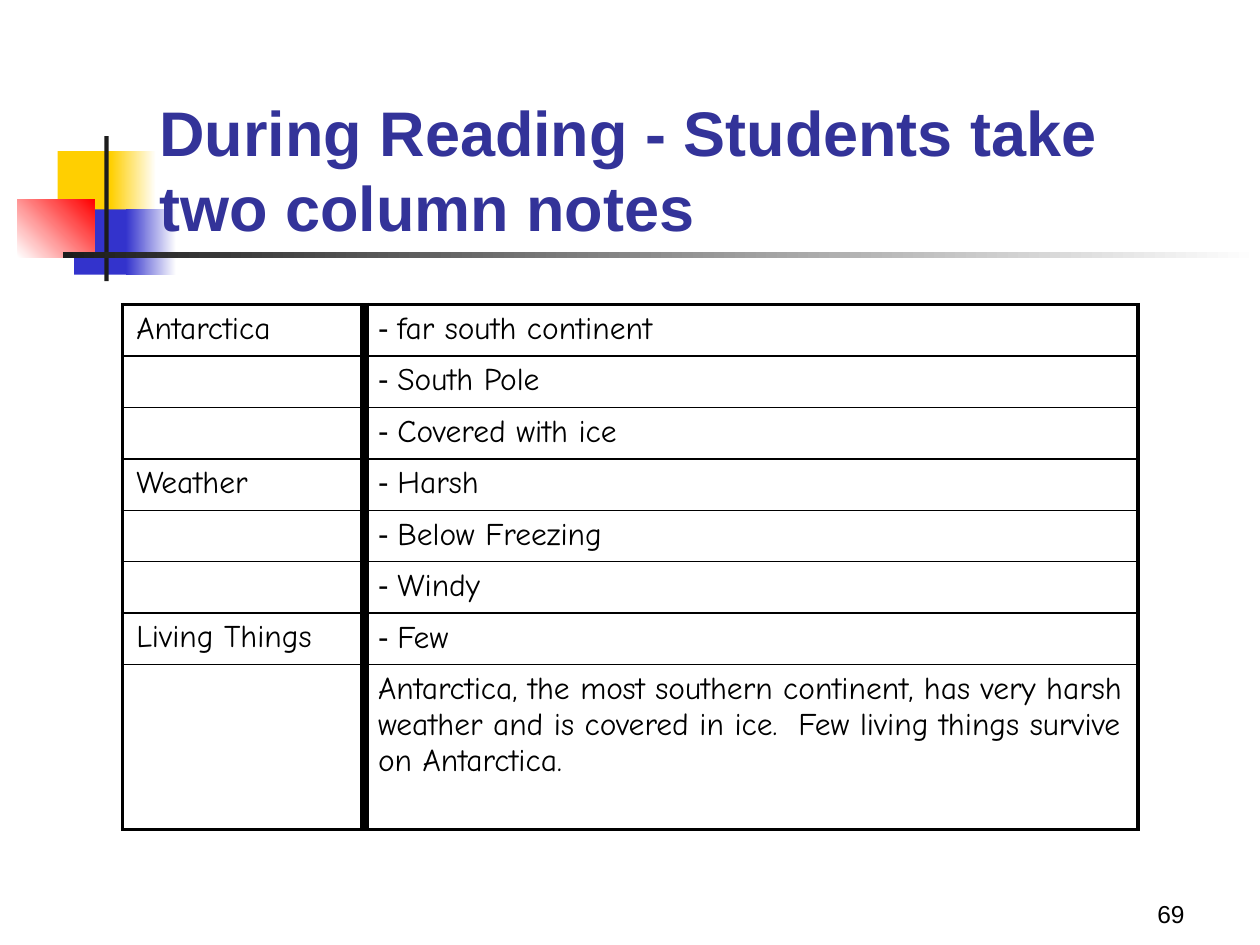
from dataclasses import dataclass

from lxml import etree
from pptx import Presentation
from pptx.dml.color import RGBColor
from pptx.enum.shapes import MSO_SHAPE
from pptx.enum.text import MSO_ANCHOR, PP_ALIGN
from pptx.oxml.ns import qn
from pptx.util import Pt

RECT = MSO_SHAPE.RECTANGLE
BOTTOM = MSO_ANCHOR.BOTTOM
LEFT, RIGHT = PP_ALIGN.LEFT, PP_ALIGN.RIGHT


@dataclass(frozen=True)
class Theme:
    gold: str = "FFCF01"
    blue: str = "3333CC"
    red: str = "FF0000"
    dark: str = "1C1C1C"
    white: str = "FFFFFF"
    black: str = "000000"
    title: str = "333399"
    sans: str = "Arial"
    hand: str = "Comic Neue"
    head: int = 36
    body: int = 18
    foot: int = 14
    thin: float = 1
    frame: float = 2.25
    spine: float = 6


THEME = Theme()

NOTES = [
    ("Antarctica", "far south continent"),
    ("", "South Pole"),
    ("", "Covered with ice"),
    ("Weather", "Harsh"),
    ("", "Below Freezing"),
    ("", "Windy"),
    ("Living Things", "Few"),
]
SUMMARY = ("Antarctica, the most southern continent, has very harsh weather "
           "and is covered in ice.  Few living things survive on Antarctica.")


def style(font, name, size, color, bold=False):
    font.name, font.size, font.bold = name, Pt(size), bold
    font.color.rgb = RGBColor.from_string(color)


def add_rect(slide, box, start, end=None, angle=0):
    """Rectangle in one colour, or fading from start to end."""
    shape = slide.shapes.add_shape(RECT, *map(Pt, box))
    shape.shadow.inherit = False
    shape.line.fill.background()
    if end is None:
        shape.fill.solid()
        shape.fill.fore_color.rgb = RGBColor.from_string(start)
        return
    shape.fill.gradient()
    shape.fill.gradient_angle = angle
    for stop, color, place in zip(shape.fill.gradient_stops, (start, end), (0, 1)):
        stop.color.rgb = RGBColor.from_string(color)
        stop.position = place


def add_motif(slide, box):
    """Overlapping squares with a cross of two bars."""
    x, y, w, h = box
    t = THEME
    add_rect(slide, (x + 23, y + 8.6, 34.6, 37.4), t.gold)
    add_rect(slide, (x + 53.3, y + 8.6, 25.9, 37.4), t.gold, t.white)
    add_rect(slide, (x + 32.4, y + 41.8, 33.1, 37.4), t.blue)
    add_rect(slide, (x + 61.9, y + 41.8, 28.8, 37.4), t.blue, t.white)
    add_rect(slide, (x, y + 36, 43.9, 33.1), t.white, t.red, 45)
    add_rect(slide, (x + 49.7, y, 2.4, h), t.dark)
    add_rect(slide, (x + 26, y + 66.2, w - 26, 3.6), t.dark, t.white)


def add_text(slide, box, text, size, color, align=LEFT, bold=False):
    frame = slide.shapes.add_textbox(*map(Pt, box)).text_frame
    frame.word_wrap = True
    frame.vertical_anchor = BOTTOM
    para = frame.paragraphs[0]
    para.text, para.alignment = text, align
    style(para.font, THEME.sans, size, color, bold)


def set_edges(cell, widths):
    """Border widths in the order left, right, top, bottom."""
    props = cell._tc.get_or_add_tcPr()
    for side, width in zip("LRTB", widths):
        line = etree.SubElement(props, qn(f"a:ln{side}"), w=str(Pt(width)))
        fill = etree.SubElement(line, qn("a:solidFill"))
        etree.SubElement(fill, qn("a:srgbClr"), val=THEME.black)


def fill_cell(cell, text, dash):
    cell.margin_left = cell.margin_right = Pt(7.9)
    cell.margin_top = cell.margin_bottom = Pt(3.6)
    para = cell.text_frame.paragraphs[0]
    style(para.font, THEME.hand, THEME.body, THEME.black)
    parts = [("- ", THEME.sans)] if dash else []
    for words, name in parts + [(text, THEME.hand)]:
        if words:
            run = para.add_run()
            run.text = words
            style(run.font, name, THEME.body, THEME.black)


def add_notes(slide, box, topic=138.2, step=29.4):
    """Two-column notes; the summary row takes the height left over."""
    x, y, w, h = box
    t = THEME
    rows = NOTES + [("", SUMMARY)]
    last = len(rows) - 1
    table = slide.shapes.add_table(len(rows), 2, *map(Pt, box)).table
    table.first_row = table.horz_banding = False
    table.columns[0].width, table.columns[1].width = Pt(topic), Pt(w - topic)
    for i, pair in enumerate(rows):
        table.rows[i].height = Pt(h - last * step if i == last else step)
        top = t.frame if i == 0 else t.thin
        base = t.frame if i == last else t.thin
        for j, text in enumerate(pair):
            cell = table.cell(i, j)
            sides = (t.spine, t.frame) if j else (t.frame, t.spine)
            set_edges(cell, (*sides, top, base))
            cell.fill.background()
            fill_cell(cell, text, dash=j == 1 and i < last)


def main():
    deck = Presentation()
    deck.slide_width, deck.slide_height = Pt(720), Pt(540)
    slide = deck.slides.add_slide(deck.slide_layouts[6])
    add_motif(slide, (10, 77.8, 710, 82.8))
    add_text(slide, (534, 498, 150, 36), "69", THEME.foot, THEME.black, RIGHT)
    add_text(slide, (84, 48, 613.5, 95.3),
             "During Reading - Students take two column notes",
             THEME.head, THEME.title, bold=True)
    add_notes(slide, (70, 174, 580.3, 300))
    deck.save("out.pptx")


if __name__ == "__main__":
    main()
